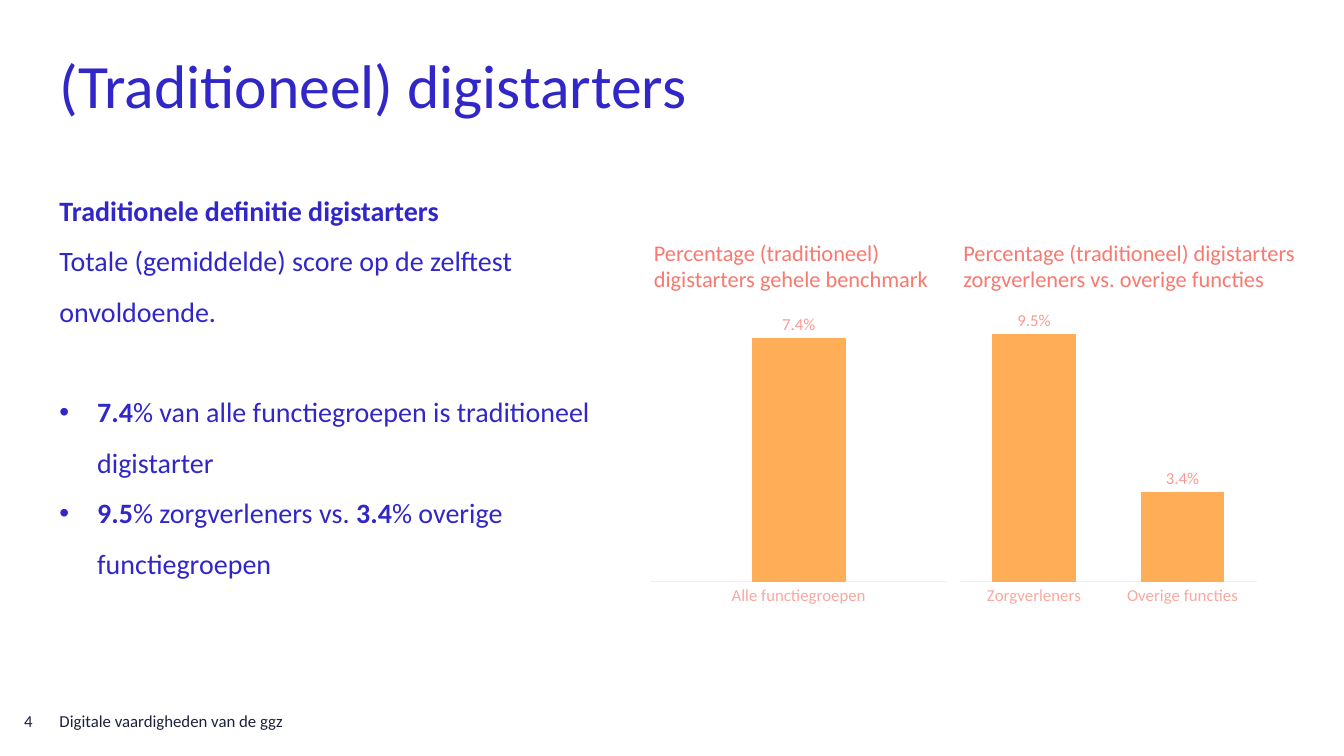
from lxml import etree
from pptx import Presentation
from pptx.chart.data import CategoryChartData
from pptx.dml.color import RGBColor
from pptx.enum.chart import XL_CHART_TYPE, XL_LABEL_POSITION, XL_TICK_LABEL_POSITION, XL_TICK_MARK
from pptx.enum.text import MSO_ANCHOR
from pptx.oxml import parse_xml
from pptx.oxml.ns import nsdecls, qn
from pptx.util import Cm, Pt

COLUMNS = XL_CHART_TYPE.COLUMN_CLUSTERED
OUTSIDE_END = XL_LABEL_POSITION.OUTSIDE_END
NO_TICK = XL_TICK_MARK.NONE
NO_TICK_LABELS = XL_TICK_LABEL_POSITION.NONE
TOP, MIDDLE = MSO_ANCHOR.TOP, MSO_ANCHOR.MIDDLE

BLUE = RGBColor(0x31, 0x27, 0xC8)
NAVY = RGBColor(0x1B, 0x21, 0x3E)
CORAL = RGBColor(0xF7, 0x79, 0x6F)
LABEL_CORAL = RGBColor(0xF9, 0x9A, 0x93)
AXIS_CORAL = RGBColor(0xFA, 0xA8, 0xA1)
AXIS_LINE = RGBColor(0xFE, 0xEB, 0xE9)
ORANGE = RGBColor(0xFF, 0xAD, 0x57)

FONT = "Calibri"
PERCENT = "0.0%"
MARGIN = 1.5
FOOTER_TOP, FOOTER_HEIGHT = 17.65, 1.02
CAPTION_TOP, CAPTION_HEIGHT = 5.89, 1.63
CHART_TOP, CHART_WIDTH, CHART_HEIGHT = 7.82, 7.8, 7.59
PLOT_AREA = {"x": 0.02, "y": 0.03, "w": 0.96, "h": 0.87}

# Each paragraph: spans of (text, bold), bulleted, space before in points
BODY = [
    ([("Traditionele definitie digistarters", True)], False, 0),
    ([("Totale (gemiddelde) score op de zelftest onvoldoende.", False)], False, 0),
    ([("7.4", True), ("% van alle functiegroepen is traditioneel digistarter", False)], True, 36),
    ([("9.5", True), ("% zorgverleners vs. ", False),
      ("3.4", True), ("% overige functiegroepen", False)], True, 0),
]

# Each chart: left, caption width, caption, values by category, gap width, axis maximum
CHARTS = [
    (16.23, 7.54, "Percentage (traditioneel) digistarters gehele benchmark",
     {"Alle functiegroepen": 0.074}, 219, 0.08),
    (24.03, 9.07, "Percentage (traditioneel) digistarters zorgverleners vs. overige functies",
     {"Zorgverleners": 0.095, "Overige functies": 0.034}, 80, 0.1),
]


def set_format(target, values):
    for name, value in values.items():
        setattr(target, name, value)


def style_font(font, size, color, bold=False):
    set_format(font, {"name": FONT, "size": Pt(size), "bold": bold})
    font.color.rgb = color


def add_box(page, left, top, width, height, anchor=TOP, inset=0):
    """Add an empty wrapping text box and return its text frame."""
    box = page.shapes.add_textbox(Cm(left), Cm(top), Cm(width), Cm(height))
    frame = box.text_frame
    set_format(frame, {"word_wrap": True, "vertical_anchor": anchor,
                       "margin_left": Cm(inset), "margin_right": Cm(inset),
                       "margin_top": Cm(inset / 2), "margin_bottom": Cm(inset / 2)})
    return frame


def add_label(page, text, size, color, place, anchor=MIDDLE, inset=0):
    para = add_box(page, *place, anchor, inset).paragraphs[0]
    span = para.add_run()
    span.text = text
    style_font(span.font, size, color)


def add_bullet(para):
    properties = para._p.get_or_add_pPr()
    properties.set("marL", str(Cm(0.95)))
    properties.set("indent", str(-Cm(0.95)))
    etree.SubElement(properties, qn("a:buFont")).set("typeface", "Arial")
    etree.SubElement(properties, qn("a:buChar")).set("char", "•")


def add_body(page):
    frame = add_box(page, MARGIN, 4.45, 14.48, 12.57)
    for index, (spans, bulleted, space) in enumerate(BODY):
        para = frame.add_paragraph() if index else frame.paragraphs[0]
        if bulleted:
            add_bullet(para)
        para.line_spacing = Pt(36)
        if space:
            para.space_before = Pt(space)
        for text, bold in spans:
            span = para.add_run()
            span.text = text
            style_font(span.font, 20, BLUE, bold)


def fix_plot_area(chart):
    """Pin the inner plot area so that both charts share a baseline."""
    plot_area = chart._chartSpace.chart.plotArea
    for old in plot_area.findall(qn("c:layout")):
        plot_area.remove(old)
    sizes = "".join(f'<c:{key} val="{value}"/>' for key, value in PLOT_AREA.items())
    plot_area.insert(0, parse_xml(
        f'<c:layout {nsdecls("c")}><c:manualLayout><c:layoutTarget val="inner"/>'
        f'<c:xMode val="edge"/><c:yMode val="edge"/>{sizes}</c:manualLayout></c:layout>'))


def add_column_chart(page, left, values, gap, maximum):
    data = CategoryChartData(number_format=PERCENT)
    data.categories = list(values)
    data.add_series("Series 1", list(values.values()))
    chart = page.shapes.add_chart(COLUMNS, Cm(left), Cm(CHART_TOP), Cm(CHART_WIDTH),
                                  Cm(CHART_HEIGHT), data).chart
    set_format(chart, {"has_legend": False, "has_title": False})
    style_font(chart.font, 10, CORAL)
    fix_plot_area(chart)

    set_format(chart.value_axis, {"visible": False, "has_major_gridlines": False,
                                  "minimum_scale": 0, "maximum_scale": maximum,
                                  "tick_label_position": NO_TICK_LABELS})
    axis = chart.category_axis
    set_format(axis, {"major_tick_mark": NO_TICK, "minor_tick_mark": NO_TICK})
    style_font(axis.tick_labels.font, 12, AXIS_CORAL)
    axis.format.line.color.rgb = AXIS_LINE
    axis.format.line.width = Pt(0.75)

    plot = chart.plots[0]
    set_format(plot, {"gap_width": gap, "overlap": -27, "vary_by_categories": False,
                      "has_data_labels": True})
    set_format(plot.data_labels, {"show_value": True, "position": OUTSIDE_END,
                                  "number_format": PERCENT, "number_format_is_linked": False})
    style_font(plot.data_labels.font, 12, LABEL_CORAL)
    columns = plot.series[0].format
    columns.fill.solid()
    columns.fill.fore_color.rgb = ORANGE
    columns.line.color.rgb = ORANGE
    columns.line.width = Pt(0.75)


def main():
    deck = Presentation()
    set_format(deck, {"slide_width": Cm(33.87), "slide_height": Cm(19.05)})
    page = deck.slides.add_slide(deck.slide_layouts[6])

    add_label(page, "(Traditioneel) digistarters", 44, BLUE, (MARGIN, 0.53, 30.86, 3.18))
    add_body(page)
    add_label(page, "Digitale vaardigheden van de ggz", 12, NAVY,
              (MARGIN, FOOTER_TOP, 10.72, FOOTER_HEIGHT))
    add_label(page, "4", 12, NAVY, (0.61, FOOTER_TOP, 0.71, FOOTER_HEIGHT))
    for left, caption_width, caption, values, gap, maximum in CHARTS:
        add_column_chart(page, left, values, gap, maximum)
        add_label(page, caption, 16, CORAL,
                  (left, CAPTION_TOP, caption_width, CAPTION_HEIGHT), TOP, 0.25)

    deck.save("out.pptx")


if __name__ == "__main__":
    main()
